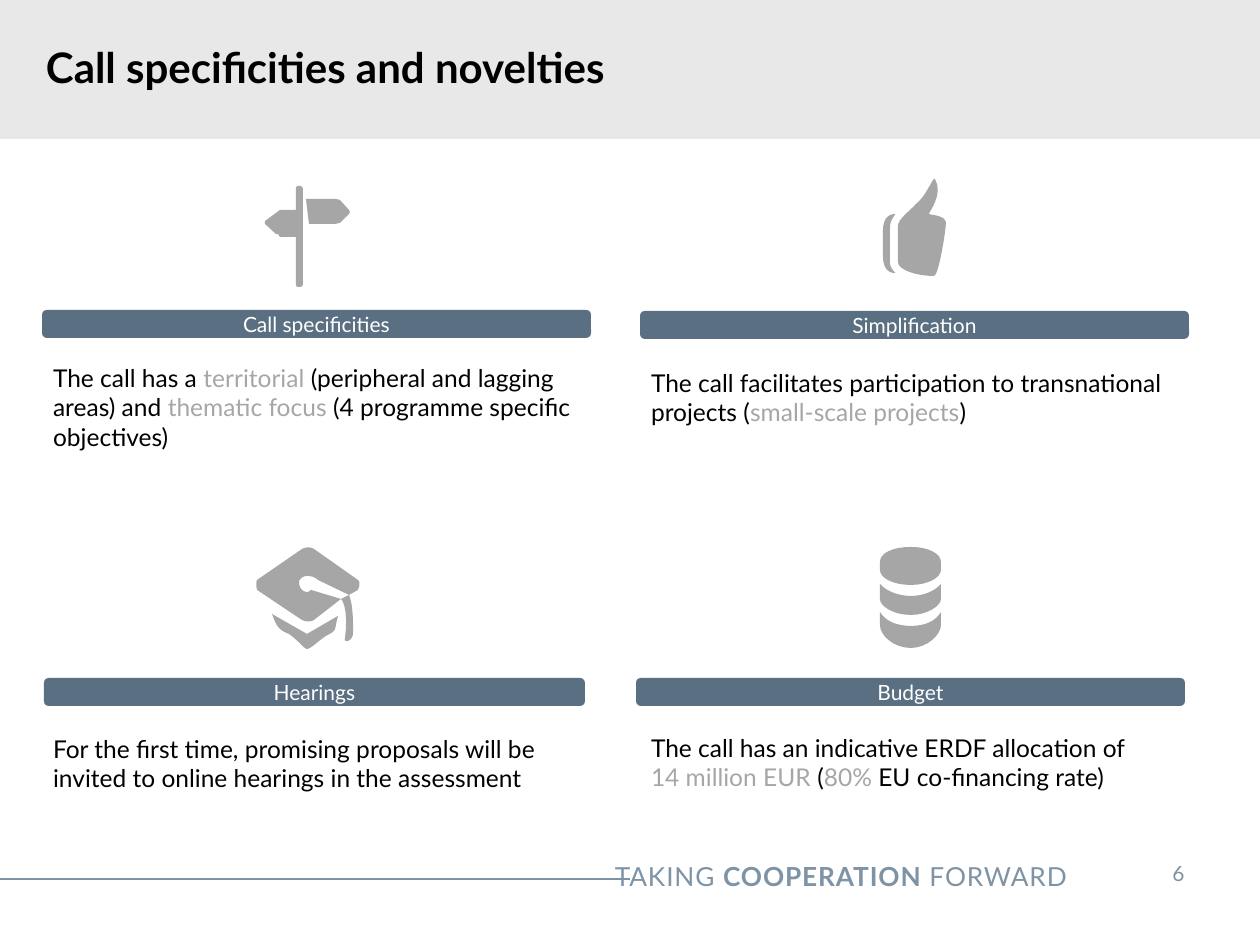
from dataclasses import dataclass

from lxml.etree import SubElement
from pptx import Presentation
from pptx.dml.color import RGBColor
from pptx.enum.shapes import MSO_CONNECTOR, MSO_SHAPE
from pptx.enum.text import MSO_ANCHOR, MSO_AUTO_SIZE, PP_ALIGN
from pptx.oxml.ns import qn
from pptx.util import Inches, Pt

PX = Inches(1) / 126
CURVE_STEPS = 8


def px(value):
    return round(value * PX)


@dataclass(frozen=True)
class Theme:
    font: str = "Lato"
    black: str = "000000"
    white: str = "FFFFFF"
    band: str = "E8E8E8"
    bar: str = "5A6F81"
    footer: str = "7E93A5"
    accent: str = "A6A6A6"
    icon: str = "A6A6A7"
    title_size: int = 24
    footer_size: int = 15
    body_size: int = 14
    label_size: int = 12


# Icon outlines: a start point, then lines (x, y) and cubic curves (six numbers)
SIGNPOST = [
    [(301, 186), (297, 186), (296, 188), (296, 210), (280, 210), (276, 213),
     (265, 221), (265, 224), (276, 234), (278, 234), (280, 237), (296, 237),
     (296, 285), (297, 287), (301, 287), (303, 285), (303, 188)],
    [(349, 210), (340, 200), (336, 199), (306, 199), (309, 224), (335, 224),
     (340, 223), (349, 214), (350, 212)],
]
THUMB = [
    [(929, 214), (929, 212, 944, 194, 935, 179), (934, 175, 926, 197, 916, 204),
     (911, 210, 898, 219, 898, 226), (898, 262), (898, 270, 917, 276, 934, 276),
     (939, 276, 946, 229, 946, 223), (946, 215, 930, 215, 929, 214)],
    [(895, 214), (892, 214, 883, 215, 883, 231), (883, 256),
     (883, 272, 892, 273, 895, 273), (897, 273, 890, 270, 890, 262),
     (890, 228), (890, 218, 897, 214, 895, 214)],
]
GRADUATION_CAP = [
    [(272, 614), (276, 625, 278, 630, 289, 634), (299, 641, 304, 649, 307, 649),
     (311, 649, 318, 641, 326, 636), (338, 630, 334, 630, 338, 616), (307, 634)],
    [(358, 580), (314, 549), (311, 547, 306, 547, 302, 549), (257, 580),
     (256, 582, 256, 585, 257, 590), (302, 620), (306, 622, 311, 622, 314, 620),
     (341, 599), (311, 590), (310, 590, 310, 592, 307, 592),
     (302, 592, 299, 587, 299, 582), (299, 580, 302, 576, 307, 576),
     (311, 576, 315, 577, 318, 580), (349, 595), (358, 590),
     (360, 585, 360, 582, 358, 580)],
    [(345, 639), (343, 641, 350, 644, 353, 635), (354, 604, 349, 595, 349, 595),
     (341, 599), (341, 599, 349, 606, 345, 639)],
]
COINS = [
    [(941, 612), (936, 621, 925, 626, 911, 626), (897, 626, 885, 621, 880, 612),
     (880, 625), (880, 635, 893, 648, 911, 648), (927, 648, 941, 635, 941, 625)],
    [(941, 584), (936, 590, 925, 596, 911, 596), (897, 596, 885, 590, 880, 584),
     (880, 599), (880, 606, 893, 615, 911, 615), (927, 615, 941, 606, 941, 599)],
    [(911, 547), (893, 547, 880, 553, 880, 562), (880, 570),
     (880, 578, 893, 585, 911, 585), (927, 585, 941, 578, 941, 570),
     (941, 562), (941, 553, 927, 547, 911, 547)],
]


def outline_points(contour):
    """Turn a contour into EMU points, sampling its curves."""
    points = [contour[0]]
    for segment in contour[1:]:
        if len(segment) == 2:
            points.append(segment)
            continue
        nodes = [points[-1], segment[:2], segment[2:4], segment[4:]]
        for step in range(1, CURVE_STEPS + 1):
            t = step / CURVE_STEPS
            weights = ((1 - t) ** 3, 3 * t * (1 - t) ** 2, 3 * t * t * (1 - t), t ** 3)
            points.append(tuple(sum(w * node[axis] for w, node in zip(weights, nodes))
                                for axis in (0, 1)))
    return [(px(x), px(y)) for x, y in points]


class SlideBuilder:
    def __init__(self, slide, theme):
        self.slide, self.shapes, self.theme = slide, slide.shapes, theme

    def place(self, shape, area):
        shape.left, shape.top, shape.width, shape.height = map(px, area)

    def paint(self, shape, color):
        shape.shadow.inherit = False
        shape.fill.solid()
        shape.fill.fore_color.rgb = RGBColor.from_string(color)
        shape.line.fill.background()

    def set_text(self, shape, spans, size, align=PP_ALIGN.LEFT, anchor=MSO_ANCHOR.TOP,
                 insets=(13, 6), wrap=True, before=0, indent=0, spacing=0):
        """Fill a shape with one paragraph of (text, color, bold) spans."""
        frame = shape.text_frame
        frame.word_wrap, frame.auto_size = wrap, MSO_AUTO_SIZE.NONE
        frame.vertical_anchor = anchor
        frame.margin_left = frame.margin_right = px(insets[0])
        frame.margin_top = frame.margin_bottom = px(insets[1])
        para = frame.paragraphs[0]
        para.alignment, para.space_before = align, Pt(before)
        properties = para._p.get_or_add_pPr()
        properties.set("marL", str(px(indent)))
        properties.set("indent", "0")
        SubElement(properties, qn("a:buNone"))
        for text, color, bold in spans:
            if text == "\n":
                para.add_line_break()
                continue
            span = para.add_run()
            span.text = text
            span.font.name, span.font.size, span.font.bold = self.theme.font, Pt(size), bold
            span.font.color.rgb = RGBColor.from_string(color)
            if spacing:
                span._r.get_or_add_rPr().set("spc", str(spacing))

    def title(self, text, area):
        self.place(self.shapes.title, area)
        self.set_text(self.shapes.title, [(text, self.theme.black, True)], self.theme.title_size)

    def band(self, area):
        band = self.shapes.add_shape(MSO_SHAPE.RECTANGLE, *map(px, area))
        self.paint(band, self.theme.band)
        self.shapes.title.element.addprevious(band.element)

    def text_box(self, spans, area, size, **style):
        box = self.shapes.add_textbox(*map(px, area))
        self.set_text(box, spans, size, **style)

    def rule(self, start, end):
        line = self.shapes.add_connector(MSO_CONNECTOR.STRAIGHT, *map(px, start + end))
        line.line.color.rgb = RGBColor.from_string(self.theme.footer)
        line.line.width = Pt(0.75)
        SubElement(line.element.spPr, qn("a:effectLst"))

    def label_bar(self, text, area):
        bar = self.shapes.add_shape(MSO_SHAPE.ROUNDED_RECTANGLE, *map(px, area))
        self.paint(bar, self.theme.bar)
        self.set_text(bar, [(text, self.theme.white, False)], self.theme.label_size,
                      align=PP_ALIGN.CENTER, anchor=MSO_ANCHOR.MIDDLE, insets=(0, 0), before=12)

    def body(self, index, parts, area):
        """Set text parts, where those marked with * are accented."""
        box = self.slide.placeholders[index]
        self.place(box, area)
        spans = [(part.lstrip("*"),
                  self.theme.accent if part.startswith("*") else self.theme.black, False)
                 for part in parts]
        self.set_text(box, spans, self.theme.body_size, insets=(0, 0), before=12, indent=11)

    def icon(self, contours):
        first, *others = map(outline_points, contours)
        builder = self.shapes.build_freeform(*first[0], scale=1.0)
        builder.add_line_segments(first[1:], close=True)
        for points in others:
            builder.move_to(*points[0])
            builder.add_line_segments(points[1:], close=True)
        self.paint(builder.convert_to_shape(), self.theme.icon)


# Topics: label, bar area, text area, text parts, icon
TOPICS = [
    ("Call specificities", (42, 310, 549, 28), (42, 363, 559, 89),
     ["The call has a ", "*territorial ", "(peripheral and lagging areas) and ",
      "*thematic focus ", "(4 programme specific objectives)"], SIGNPOST),
    ("Simplification", (640, 311, 549, 28), (640, 368, 549, 59),
     ["The call facilitates participation to transnational projects (",
      "*small-scale projects", ")"], THUMB),
    ("Hearings", (44, 678, 541, 28), (42, 734, 549, 59),
     ["For the first time, promising proposals will be invited to online hearings "
      "in the assessment"], GRADUATION_CAP),
    ("Budget", (636, 678, 549, 28), (640, 733, 614, 59),
     ["The call has an indicative ERDF allocation of ", "\n", "*14 million EUR", " (",
      "*80%", " EU co-financing rate)"], COINS),
]


def main():
    deck = Presentation()
    deck.slide_width, deck.slide_height = px(1260), px(945)
    theme = Theme()
    page = SlideBuilder(deck.slides.add_slide(deck.slide_layouts.get_by_name("Comparison")), theme)

    # Header
    page.band((0, 0, 1260, 139))
    page.title("Call specificities and novelties", (33, 35, 1227, 95))

    # Footer
    page.rule((-1, 879), (630, 879))
    page.text_box([("TAKING ", theme.footer, False), ("COOPERATION", theme.footer, True),
                   (" FORWARD", theme.footer, False)], (489, 854, 591, 44),
                  theme.footer_size, align=PP_ALIGN.RIGHT, spacing=50)
    page.text_box([("6", theme.footer, False)], (1140, 848, 77, 50), theme.label_size,
                  align=PP_ALIGN.CENTER, insets=(25, 13), wrap=False)

    # Four topics
    for index, (label, bar_area, text_area, parts, contours) in enumerate(TOPICS, start=1):
        page.icon(contours)
        page.label_bar(label, bar_area)
        page.body(index, parts, text_area)

    deck.save("out.pptx")


if __name__ == "__main__":
    main()
